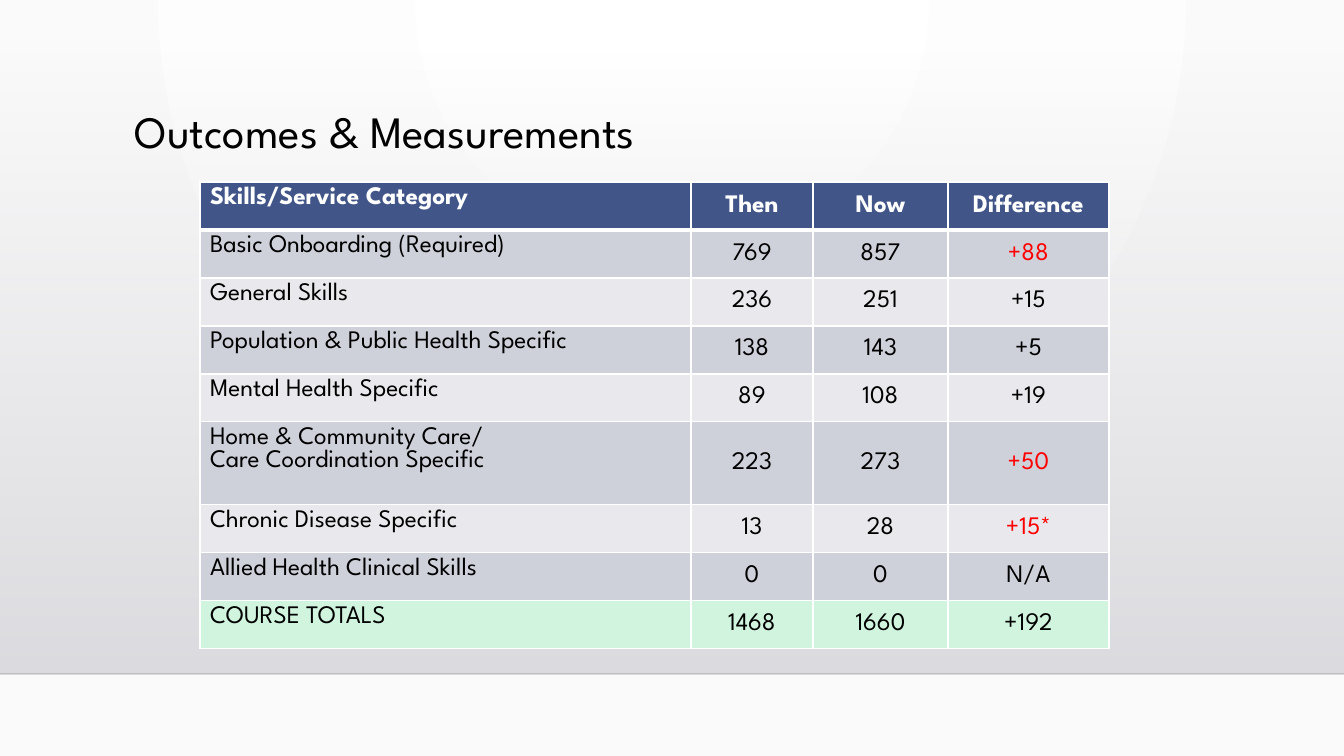
from lxml.etree import SubElement
from pptx import Presentation
from pptx.dml.color import RGBColor
from pptx.enum.shapes import MSO_CONNECTOR, MSO_SHAPE
from pptx.enum.text import MSO_ANCHOR, PP_ALIGN
from pptx.oxml.ns import qn
from pptx.util import Pt

# Content
TITLE = "Outcomes & Measurements"
HEADER = ("Skills/Service Category", "Then", "Now", "Difference")
CATEGORIES = [
    ("Basic Onboarding (Required)", "769", "857", "+88"),
    ("General Skills", "236", "251", "+15"),
    ("Population & Public Health Specific", "138", "143", "+5"),
    ("Mental Health Specific", "89", "108", "+19"),
    ("Home & Community Care/\vCare Coordination Specific", "223", "273", "+50"),
    ("Chronic Disease Specific", "13", "28", "+15*"),
    ("Allied Health Clinical Skills", "0", "0", "N/A"),
]
TOTALS = ("COURSE TOTALS", "1468", "1660", "+192")
HIGHLIGHTS = {"+88", "+50", "+15*"}

THEME = {
    "font": "League Spartan", "title_size": 32, "table_size": 18,
    "text": "000000", "header_text": "FFFFFF", "highlight": "FF0000",
    "header": "415588", "bands": ("CFD1DA", "E9E9ED"), "totals": "D1F4DF",
    "border": "FFFFFF", "floor_line": "000001",
    "glow": ("FFFFFF", "FAFAFA"), "wall": ("DCDCE0", "DEDEE2"),
}

# Layout in px
SLIDE_W, SLIDE_H = 1344, 756
FLOOR_Y, WALL_TOP = 674, 51
TITLE_BOX = (125, 105, 1058, 116)
TABLE_LEFT, TABLE_TOP = 200, 182
COLUMNS = (491, 122, 135, 161)
ROW_H, TALL_ROW_H = 48, 83


def px(n):
    return round(n * 914400 / 100.8)


def rgb(color):
    return RGBColor.from_string(color)


def add(parent, tag, **attributes):
    child = SubElement(parent, qn(tag))
    for key, value in attributes.items():
        child.set(key, str(value))
    return child


def set_stops(fill, colors):
    fill.gradient()
    for stop, color in zip(fill.gradient_stops, colors):
        stop.color.rgb = rgb(color)
    fill.gradient_stops[0].position, fill.gradient_stops[1].position = 0, 1


def set_alpha(element, percent):
    add(element.find(".//" + qn("a:srgbClr")), "a:alpha", val=percent * 1000)


def style(frame, size, color, bold=False, align=PP_ALIGN.LEFT):
    for paragraph in frame.paragraphs:
        paragraph.alignment = align
        for run in paragraph.runs:
            run.font.name = THEME["font"]
            run.font.size = Pt(size)
            run.font.bold = bold
            run.font.color.rgb = rgb(color)


def set_borders(cell, top, bottom):
    properties = cell._tc.get_or_add_tcPr()
    widths = (("a:lnL", 1), ("a:lnR", 1), ("a:lnT", top), ("a:lnB", bottom))
    for tag, width in widths:
        border = add(properties, tag, w=Pt(width))
        add(add(border, "a:solidFill"), "a:srgbClr", val=THEME["border"])


presentation = Presentation()
presentation.slide_width, presentation.slide_height = px(SLIDE_W), px(SLIDE_H)
slide = presentation.slides.add_slide(presentation.slide_layouts[6])

# Background glow, spreading from the top centre
set_stops(slide.background.fill, THEME["glow"])
glow = slide.background._cSld.find(".//" + qn("a:gradFill"))
glow.remove(glow.find(qn("a:lin")))
add(add(glow, "a:path", path="circle"), "a:fillToRect",
    l=43000, t=0, r=43000, b=100000)

# Wall fading in towards the floor line
wall = slide.shapes.add_shape(MSO_SHAPE.RECTANGLE, 0, px(WALL_TOP),
                              px(SLIDE_W), px(FLOOR_Y - WALL_TOP))
wall.shadow.inherit = False
wall.line.fill.background()
set_stops(wall.fill, THEME["wall"])
wall.fill.gradient_angle = 270
set_alpha(wall._element.spPr.find(qn("a:gradFill")), 0)

floor_line = slide.shapes.add_connector(
    MSO_CONNECTOR.STRAIGHT, 0, px(FLOOR_Y), px(SLIDE_W), px(FLOOR_Y))
floor_line.line.width = Pt(1)
floor_line.line.color.rgb = rgb(THEME["floor_line"])
set_alpha(floor_line._element.spPr.find(qn("a:ln")), 20)
add(floor_line._element.spPr, "a:effectLst")

# Title
title = slide.shapes.add_textbox(*map(px, TITLE_BOX)).text_frame
title.word_wrap = True
title.text = TITLE
title.paragraphs[0].line_spacing = 0.9
style(title, THEME["title_size"], THEME["text"])

# Table of course counts
rows = [HEADER, *CATEGORIES, TOTALS]
heights = [TALL_ROW_H if "\v" in row[0] else ROW_H for row in rows]
fills = [THEME["header"],
         *(THEME["bands"][i % 2] for i in range(len(CATEGORIES))),
         THEME["totals"]]
courses = slide.shapes.add_table(
    len(rows), len(COLUMNS), px(TABLE_LEFT), px(TABLE_TOP),
    px(sum(COLUMNS)), px(sum(heights))).table
for column, width in zip(courses.columns, COLUMNS):
    column.width = px(width)

for r, (row, height, fill) in enumerate(zip(rows, heights, fills)):
    courses.rows[r].height = px(height)
    for c, value in enumerate(row):
        cell = courses.cell(r, c)
        cell.text_frame.text = value
        is_header = r == 0
        color = THEME["header_text"] if is_header else THEME["text"]
        if value in HIGHLIGHTS:
            color = THEME["highlight"]
        style(cell.text_frame, THEME["table_size"], color, is_header,
              PP_ALIGN.CENTER if c else PP_ALIGN.LEFT)
        cell.vertical_anchor = MSO_ANCHOR.MIDDLE if c else MSO_ANCHOR.TOP
        set_borders(cell, 3 if r == 1 else 1, 3 if is_header else 1)
        cell.fill.solid()
        cell.fill.fore_color.rgb = rgb(fill)

presentation.save("out.pptx")
